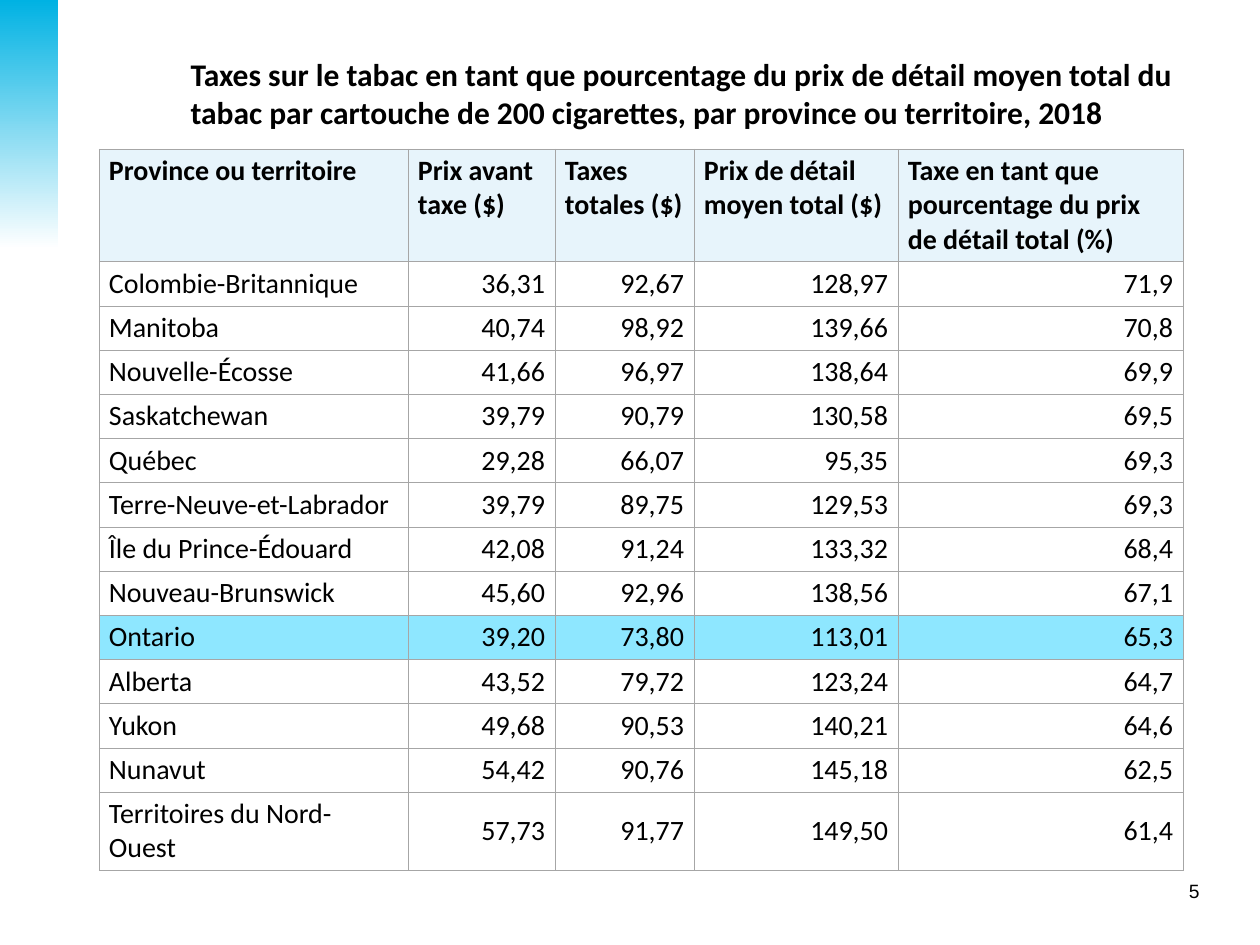
from lxml import etree
from pptx import Presentation
from pptx import util as u
from pptx.dml.color import RGBColor
from pptx.enum import shapes, text
from pptx.oxml.ns import qn

EMU_PER_PX = 914400 / 126
COLORS = {
    "text": "000000",
    "band": "00B2E3",
    "background": "FFFFFF",
    "header": "E7F4FB",
    "highlight": "8EE7FF",
    "border": "A6A6A6",
}
TITLE = (
    "Taxes sur le tabac en tant que pourcentage du prix de détail moyen total du "
    "tabac par cartouche de 200 cigarettes, par province ou territoire, 2018"
)
HEADERS = [
    "Province ou territoire",
    "Prix avant taxe ($)",
    "Taxes totales ($)",
    "Prix de détail moyen total ($)",
    "Taxe en tant que pourcentage du prix de détail total (%)",
]
PROVINCES = [
    ("Colombie-Britannique", "36,31", "92,67", "128,97", "71,9"),
    ("Manitoba", "40,74", "98,92", "139,66", "70,8"),
    ("Nouvelle-Écosse", "41,66", "96,97", "138,64", "69,9"),
    ("Saskatchewan", "39,79", "90,79", "130,58", "69,5"),
    ("Québec", "29,28", "66,07", "95,35", "69,3"),
    ("Terre-Neuve-et-Labrador", "39,79", "89,75", "129,53", "69,3"),
    ("Île du Prince-Édouard", "42,08", "91,24", "133,32", "68,4"),
    ("Nouveau-Brunswick", "45,60", "92,96", "138,56", "67,1"),
    ("Ontario", "39,20", "73,80", "113,01", "65,3"),
    ("Alberta", "43,52", "79,72", "123,24", "64,7"),
    ("Yukon", "49,68", "90,53", "140,21", "64,6"),
    ("Nunavut", "54,42", "90,76", "145,18", "62,5"),
    ("Territoires du Nord-Ouest", "57,73", "91,77", "149,50", "61,4"),
]
HIGHLIGHTED = "Ontario"
COLUMN_WIDTHS = [309, 147, 139, 204, 285]
ROW_HEIGHTS = [112] + [44] * (len(PROVINCES) - 1) + [78]


def px(length):
    return u.Emu(round(length * EMU_PER_PX))


def color(name):
    return RGBColor.from_string(COLORS[name])


def add_run(paragraph, content, size, font="Calibri", bold=False):
    run = paragraph.add_run()
    run.text = content
    run.font.name = font
    run.font.size = u.Pt(size)
    run.font.bold = bold
    run.font.color.rgb = color("text")


def add_gradient_band(slide):
    band = slide.shapes.add_shape(
        shapes.MSO_SHAPE.RECTANGLE, px(0), px(0), px(58), px(249)
    )
    band.shadow.inherit = False
    band.line.fill.background()
    band.fill.gradient()
    band.fill.gradient_angle = 270
    for stop, name in zip(band.fill.gradient_stops, ("band", "background")):
        stop.color.rgb = color(name)


def set_title(slide):
    title = slide.shapes.title
    title.left, title.top, title.width, title.height = map(px, (178, 49, 1017, 136))
    frame = title.text_frame
    frame.word_wrap = True
    frame.auto_size = text.MSO_AUTO_SIZE.NONE
    frame.vertical_anchor = text.MSO_ANCHOR.TOP
    paragraph = frame.paragraphs[0]
    paragraph.alignment = text.PP_ALIGN.LEFT
    add_run(paragraph, TITLE, 18, bold=True)


def set_borders(cell):
    """Insert the four border lines ahead of the cell's fill, as the schema asks."""
    properties = cell._tc.get_or_add_tcPr()
    for index, side in enumerate(("lnL", "lnR", "lnT", "lnB")):
        line = etree.Element(qn(f"a:{side}"), w=str(u.Pt(0.25)))
        fill = etree.SubElement(line, qn("a:solidFill"))
        etree.SubElement(fill, qn("a:srgbClr"), val=COLORS["border"])
        properties.insert(index, line)


def fill_cell(cell, content, fill=None, bold=False, anchor=None, alignment=None):
    cell.margin_left = cell.margin_right = px(10)
    cell.margin_top = cell.margin_bottom = px(5)
    cell.vertical_anchor = anchor
    if fill:
        cell.fill.solid()
        cell.fill.fore_color.rgb = color(fill)
    else:
        cell.fill.background()
    set_borders(cell)
    paragraph = cell.text_frame.paragraphs[0]
    paragraph.alignment = alignment
    add_run(paragraph, content, 16, bold=bold)


def add_tax_table(slide):
    table = slide.shapes.add_table(
        len(ROW_HEIGHTS), len(COLUMN_WIDTHS),
        px(99), px(149), px(sum(COLUMN_WIDTHS)), px(sum(ROW_HEIGHTS)),
    ).table
    table.horz_banding = False
    for column, width in zip(table.columns, COLUMN_WIDTHS):
        column.width = px(width)
    for row, height in zip(table.rows, ROW_HEIGHTS):
        row.height = px(height)

    for column, header in enumerate(HEADERS):
        fill_cell(table.cell(0, column), header, "header", bold=True,
                  anchor=text.MSO_ANCHOR.TOP)
    for row, (province, *figures) in enumerate(PROVINCES, start=1):
        fill = "highlight" if province == HIGHLIGHTED else None
        fill_cell(table.cell(row, 0), province, fill, anchor=text.MSO_ANCHOR.BOTTOM)
        for column, figure in enumerate(figures, start=1):
            fill_cell(table.cell(row, column), figure, fill,
                      anchor=text.MSO_ANCHOR.MIDDLE, alignment=text.PP_ALIGN.RIGHT)


def add_page_number(slide, number):
    box = slide.shapes.add_textbox(px(1065), px(873), px(147), px(37))
    box.text_frame.word_wrap = True
    paragraph = box.text_frame.paragraphs[0]
    paragraph.alignment = text.PP_ALIGN.RIGHT
    add_run(paragraph, number, 11, font="Arial")


def main():
    presentation = Presentation()
    presentation.slide_width = px(1260)
    presentation.slide_height = px(945)
    slide = presentation.slides.add_slide(presentation.slide_layouts[5])
    add_gradient_band(slide)
    set_title(slide)
    add_tax_table(slide)
    add_page_number(slide, "5")
    presentation.save("out.pptx")


if __name__ == "__main__":
    main()
